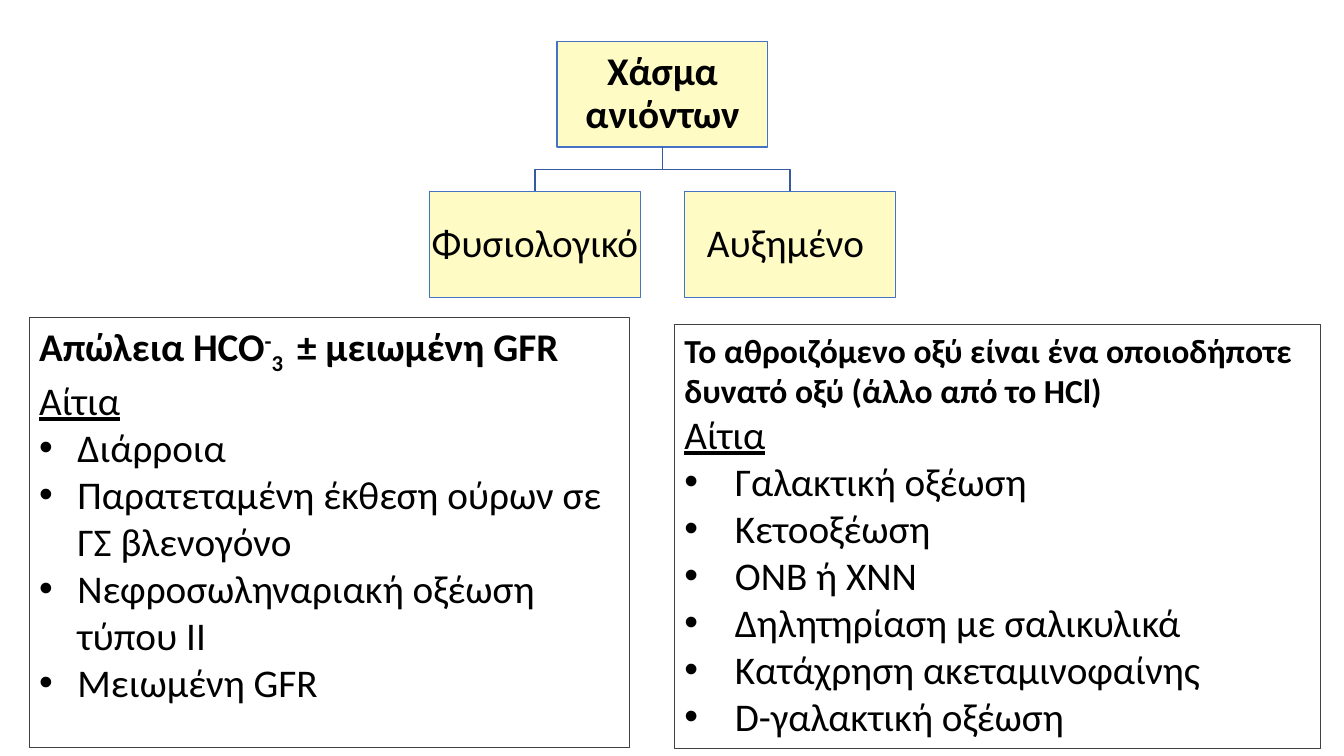
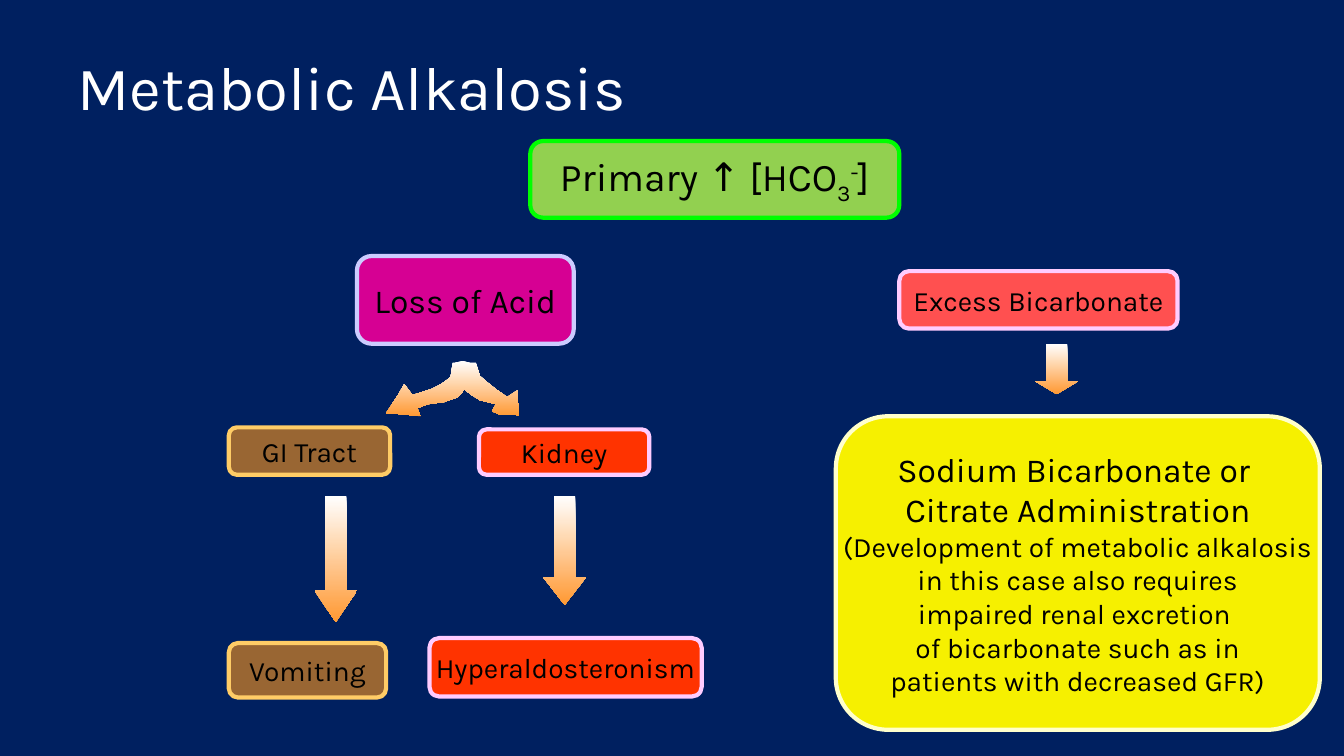
from lxml import etree
from pptx import Presentation
from pptx import util as u
from pptx.dml.color import RGBColor
from pptx.enum import shapes, text
from pptx.oxml import ns

WIDTH, HEIGHT = 13.33, 7.5
BLACK, WHITE, NAVY, ORANGE = "000000", "FFFFFF", "002060", "FF9933"
CREAM, BLUE, CONNECTOR, GREY = "FFFBC4", "4472C4", "365B9D", "404040"

TREE = {"root": "Χάσμα ανιόντων", "branches": ["Φυσιολογικό ", "Αυξημένο "]}
NODE_WIDTH, NODE_HEIGHT, NODE_GAP, TREE_TOP = 2.09, 1.05, 0.44, 0.41
TREE_CENTRE = 6.57

CAUSES_TITLE = "Αίτια"
PANELS = [
    {"place": (0.29, 3.15, 5.95, 4.27), "indent": 0.38, "size": 28,
     "heading": [("Απώλεια HCO", 0), ("-", 30), ("3 ", -25), (" ± μειωμένη GFR", 0)],
     "causes": ["Διάρροια", "Παρατεταμένη έκθεση ούρων σε ΓΣ βλενογόνο",
                "Νεφροσωληναριακή οξέωση τύπου ΙΙ", "Μειωμένη GFR"]},
    {"place": (6.69, 3.22, 6.41, 4.21), "indent": 0.5, "size": 24,
     "heading": [("Το αθροιζόμενο οξύ είναι ένα οποιοδήποτε δυνατό οξύ (άλλο από το HCl)", 0)],
     "causes": ["Γαλακτική οξέωση", "Κετοοξέωση", "ΟΝΒ ή ΧΝΝ", "Δηλητηρίαση με σαλικυλικά",
                "Κατάχρηση ακεταμινοφαίνης", "D-γαλακτική οξέωση"]},
]

ALKALOSIS_TITLE = "Metabolic Alkalosis"
STYLES = {
    "primary": ("92D050", "00FF00"),
    "acid": ("D60093", "CCCCFF"),
    "gut": ("996633", "FFCC66"),
    "kidney": ("FF3300", "FFCCFF"),
    "excess": ("FF5050", "FFCCFF"),
    "sodium": ("F6F000", "FFFFCC"),
}
FLOW = [
    ("primary", (5.26, 1.4, 3.66, 0.76),
     [([("Primary ↑ [HCO", 0), ("3", -25), ("-", 30), ("]", 0)], 28)]),
    ("acid", (3.54, 2.54, 2.15, 0.87), [("Loss of Acid", 24)]),
    ("gut", (2.27, 4.24, 1.6, 0.47), [("GI Tract", 20)]),
    ("kidney", (4.75, 4.26, 1.69, 0.45), [("Kidney", 20)]),
    ("gut", (2.27, 6.38, 1.56, 0.54), [("Vomiting", 20)]),
    ("kidney", (4.26, 6.33, 2.7, 0.58), [("Hyperaldosteronism", 20)]),
    ("excess", (8.92, 2.69, 2.76, 0.57), [("Excess Bicarbonate", 20)]),
    ("sodium", (8.29, 4.13, 4.8, 3.11),
     [("Sodium Bicarbonate or ", 24), ("Citrate Administration", 24),
      ("(Development of metabolic alkalosis", 20), (" in this case also requires ", 20),
      ("impaired renal excretion ", 20), ("of bicarbonate such as in", 20),
      ("patients with decreased GFR)", 20)]),
]
ARROW_WIDTH, ARROW_HEAD = 0.42, 0.31
ARROWS = [(3.12, 4.92, 1.25), (5.39, 4.92, 1.08), (10.27, 3.41, 0.5)]
FORK = [
    (449, 360), (447, 374), (442, 378), (436, 382), (428, 386), (409, 392), (401, 381),
    (396, 390), (383, 410), (400, 411), (417, 413), (414, 405), (424, 401), (440, 399),
    (454, 394), (458, 390), (460, 386), (468, 392), (476, 397), (492, 401), (489, 406),
    (488, 408), (495, 411), (504, 411), (515, 412), (514, 387), (509, 390), (503, 394),
    (493, 387), (483, 379), (476, 373), (472, 360), (466, 360), (459, 358), (451, 360),
]


def colour(value):
    return RGBColor.from_string(value)


def inches(values):
    return [u.Inches(value) for value in values]


def add_bullet(paragraph, indent):
    properties = paragraph._p.get_or_add_pPr()
    properties.set("marL", str(u.Inches(indent)))
    properties.set("indent", str(-u.Inches(indent)))
    etree.SubElement(properties, ns.qn("a:buFont")).set("typeface", "Arial")
    etree.SubElement(properties, ns.qn("a:buChar")).set("char", "•")


def write(paragraph, content, font, size, ink=BLACK, align=text.PP_ALIGN.LEFT,
          bold=False, underline=False, indent=0):
    paragraph.alignment = align
    if indent:
        add_bullet(paragraph, indent)
    pieces = [(content, 0)] if isinstance(content, str) else content
    for words, baseline in pieces:
        run = paragraph.add_run()
        run.text = words
        run.font.name, run.font.size = font, u.Pt(size)
        run.font.bold, run.font.underline = bold, underline
        run.font.color.rgb = colour(ink)
        if baseline:
            run._r.get_or_add_rPr().set("baseline", str(baseline * 1000))


def write_all(frame, lines, font, **shared):
    for index, (content, size, options) in enumerate(lines):
        paragraph = frame.add_paragraph() if index else frame.paragraphs[0]
        write(paragraph, content, font, size, **shared, **options)


def add_box(slide, kind, place, fill, line, weight, anchor=text.MSO_ANCHOR.MIDDLE, wrap=True):
    shape = slide.shapes.add_shape(kind, *inches(place))
    shape.shadow.inherit = False
    if fill:
        shape.fill.solid()
        shape.fill.fore_color.rgb = colour(fill)
    else:
        shape.fill.background()
    shape.line.color.rgb = colour(line)
    shape.line.width = u.Pt(weight)
    shape.text_frame.vertical_anchor = anchor
    shape.text_frame.word_wrap = wrap
    return shape


def add_node(slide, words, left, top, bold=False):
    node = add_box(slide, shapes.MSO_SHAPE.RECTANGLE, (left, top, NODE_WIDTH, NODE_HEIGHT),
                   CREAM, BLUE, 1)
    frame = node.text_frame
    frame.margin_left = frame.margin_right = u.Inches(0.02)
    frame.margin_top = frame.margin_bottom = u.Inches(0.02)
    write(frame.paragraphs[0], words, "Calibri", 28, align=text.PP_ALIGN.CENTER, bold=bold)
    frame.paragraphs[0].line_spacing = 0.9
    return node


def add_elbow(slide, parent, child):
    connector = slide.shapes.add_connector(shapes.MSO_CONNECTOR.ELBOW, 0, 0, 0, 0)
    connector.begin_connect(parent, 2)
    connector.end_connect(child, 0)
    start, end = parent.left + parent.width // 2, child.left + child.width // 2
    top, bottom = parent.top + parent.height, child.top
    run, drop = abs(end - start), bottom - top
    connector.left, connector.top = (start + end - drop) // 2, (top + bottom - run) // 2
    connector.width, connector.height = drop, run
    rightward = end > start
    transform = connector._element.spPr.xfrm
    transform.set("rot", str((270 if rightward else 90) * 60000))
    transform.set("flipH", "1" if rightward else "0")
    transform.set("flipV", "0")
    connector.line.color.rgb = colour(CONNECTOR)
    connector.line.width = u.Pt(1)
    etree.SubElement(connector._element.spPr, ns.qn("a:effectLst"))


def add_tree(slide):
    root = add_node(slide, TREE["root"], TREE_CENTRE - NODE_WIDTH / 2, TREE_TOP, bold=True)
    pitch = NODE_WIDTH + NODE_GAP
    first = TREE_CENTRE - pitch * (len(TREE["branches"]) - 1) / 2 - NODE_WIDTH / 2
    for index, words in enumerate(TREE["branches"]):
        node = add_node(slide, words, first + pitch * index, TREE_TOP + NODE_HEIGHT + NODE_GAP)
        add_elbow(slide, root, node)


def add_panel(slide, panel):
    box = add_box(slide, shapes.MSO_SHAPE.RECTANGLE, panel["place"], None, GREY, 0.75,
                  text.MSO_ANCHOR.TOP)
    lines = [(panel["heading"], panel["size"], {"bold": True}),
             (CAUSES_TITLE, 28, {"underline": True})]
    lines += [(cause, 28, {"indent": panel["indent"]}) for cause in panel["causes"]]
    write_all(box.text_frame, lines, "Calibri")


def shade(shape):
    shape.shadow.inherit = False
    shape.line.fill.background()
    shape.fill.gradient()
    shape.fill.gradient_angle = 270
    for stop, value in zip(shape.fill.gradient_stops, (WHITE, ORANGE)):
        stop.color.rgb = colour(value)


def add_title(slide, words):
    box = slide.shapes.add_textbox(*inches((0.67, 0.07, 8.25, 1.57)))
    box.text_frame.word_wrap = True
    box.text_frame.vertical_anchor = text.MSO_ANCHOR.MIDDLE
    write(box.text_frame.paragraphs[0], words, "Karla", 44, WHITE)


def build_anion_gap(slide):
    add_tree(slide)
    for panel in PANELS:
        add_panel(slide, panel)


def build_alkalosis(slide):
    slide.background.fill.solid()
    slide.background.fill.fore_color.rgb = colour(NAVY)
    add_title(slide, ALKALOSIS_TITLE)
    for style, place, lines in FLOW:
        box = add_box(slide, shapes.MSO_SHAPE.ROUNDED_RECTANGLE, place, *STYLES[style], 3,
                      wrap=False)
        write_all(box.text_frame, [(words, size, {}) for words, size in lines], "Karla",
                  align=text.PP_ALIGN.CENTER)
    builder = slide.shapes.build_freeform(*FORK[0], scale=u.Inches(0.01))
    builder.add_line_segments(FORK[1:], close=True)
    shade(builder.convert_to_shape())
    for left, top, length in ARROWS:
        arrow = slide.shapes.add_shape(shapes.MSO_SHAPE.DOWN_ARROW,
                                       *inches((left, top, ARROW_WIDTH, length)))
        arrow.adjustments[1] = min(ARROW_HEAD, length * 0.25) / ARROW_WIDTH
        shade(arrow)


def main():
    presentation = Presentation()
    presentation.slide_width, presentation.slide_height = inches((WIDTH, HEIGHT))
    for build in (build_anion_gap, build_alkalosis):
        build(presentation.slides.add_slide(presentation.slide_layouts[6]))
    presentation.save("out.pptx")


if __name__ == "__main__":
    main()
